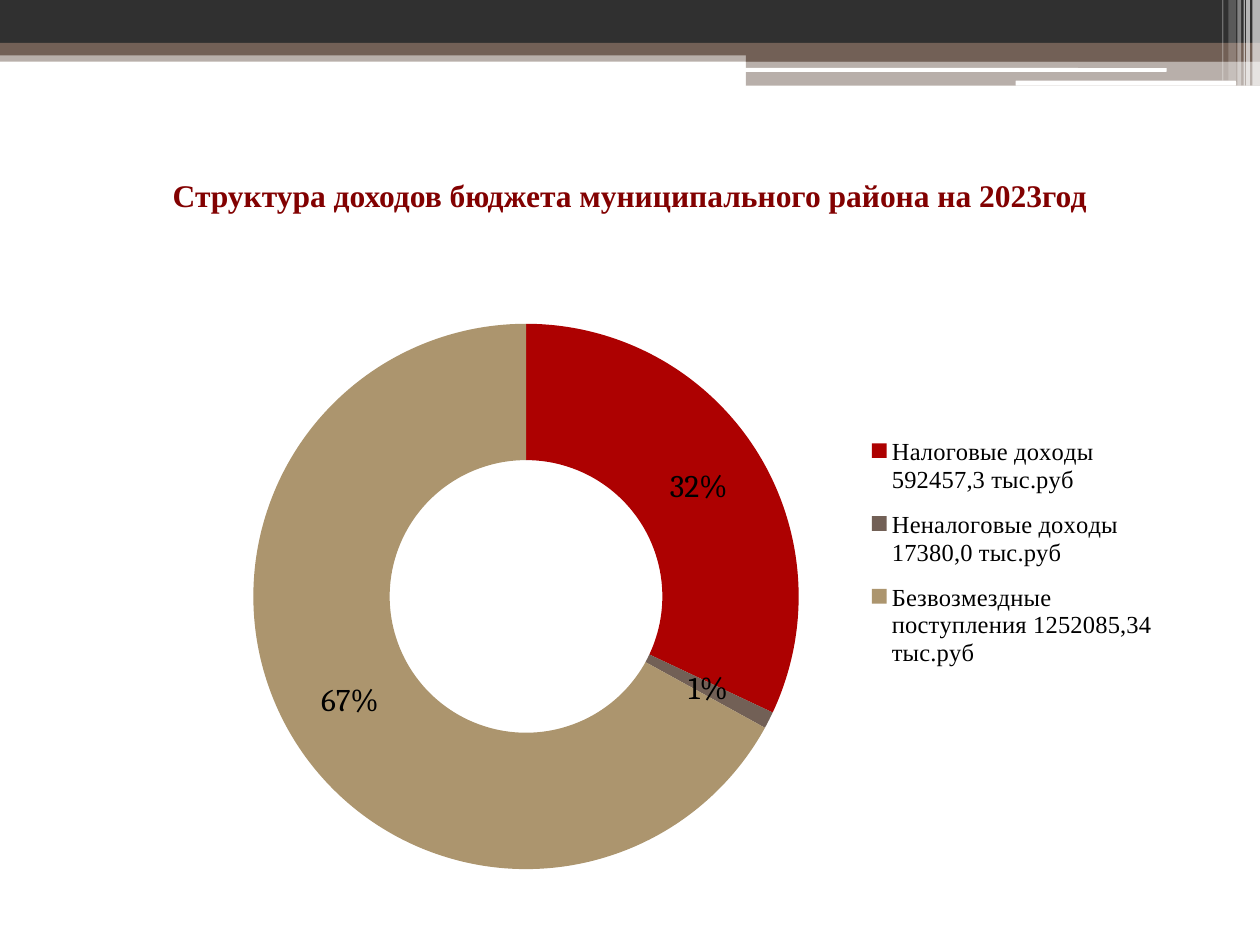
from lxml import etree
from pptx import Presentation
from pptx import util as u
from pptx.chart.data import CategoryChartData
from pptx.dml.color import RGBColor
from pptx.enum import chart as charts, shapes, text
from pptx.oxml import parse_xml
from pptx.oxml.ns import nsdecls, qn

COLORS = {
    "dark": "303030", "brown": "726056", "white": "FFFFFF", "black": "000000",
    "title": "820101", "red": "AD0101", "sand": "AC956E",
}
SERIF = "Times New Roman"

# Left, top, width, height, colour, opacity in percent
BANDS = [
    (0, 0.4, 10, 0.09, "brown", 50),
    (0, 0, 10, 0.34, "dark", 100),
    (0, 0.34, 10, 0.1, "brown", 100),
    (5.92, 0.39, 4.08, 0.1, "brown", 100),
    (5.92, 0.48, 4.08, 0.2, "brown", 50),
]
ROUNDED_LINES = [(5.91, 0.54, 3.35, 0.03), (8.06, 0.64, 1.75, 0.04)]
# Left, width, height, opacity in percent
STRIPES = [
    (9.94, 0.06, 0.68, 65), (9.89, 0.03, 0.68, 65), (9.87, 0.01, 0.68, 60),
    (9.82, 0.03, 0.68, 40), (9.75, 0.06, 0.64, 20), (9.7, 0.01, 0.64, 30),
]
# Category, share, colour
INCOME = [
    ("Налоговые доходы 592457,3 тыс.руб", 32, "red"),
    ("Неналоговые доходы 17380,0 тыс.руб", 1, "brown"),
    ("Безвозмездные поступления 1252085,34 тыс.руб", 67, "sand"),
]


def rgb(name):
    return RGBColor.from_string(COLORS[name])


def inches(box):
    return [u.Inches(value) for value in box]


def add_block(slide, box, color, opacity=100, kind=shapes.MSO_SHAPE.RECTANGLE):
    shape = slide.shapes.add_shape(kind, *inches(box))
    shape.shadow.inherit = False
    shape.line.fill.background()
    shape.fill.solid()
    shape.fill.fore_color.rgb = rgb(color)
    if opacity < 100:
        color_element = shape.fill._xPr.find(".//" + qn("a:srgbClr"))
        etree.SubElement(color_element, qn("a:alpha"), val=str(opacity * 1000))


def add_header(slide, box):
    left, top = box[:2]
    for x, y, width, height, color, opacity in BANDS:
        add_block(slide, (left + x, top + y, width, height), color, opacity)
    for x, y, width, height in ROUNDED_LINES:
        add_block(slide, (left + x, top + y, width, height), "white",
                  kind=shapes.MSO_SHAPE.ROUNDED_RECTANGLE)
    for x, width, height, opacity in STRIPES:
        add_block(slide, (left + x, top, width, height), "white", opacity)


def add_title(slide, box, wording):
    frame = slide.shapes.add_textbox(*inches(box)).text_frame
    frame.word_wrap = True
    frame.vertical_anchor = text.MSO_ANCHOR.MIDDLE
    paragraph = frame.paragraphs[0]
    paragraph.text = wording
    paragraph.alignment = text.PP_ALIGN.CENTER
    set_font(paragraph.font, SERIF, 18, "title")
    paragraph.font.bold = True


def set_font(font, name, size, color):
    font.name = name
    font.size = u.Pt(size)
    font.color.rgb = rgb(color)


def layout_xml(x, y, width, height, target=""):
    """Manual chart layout, in fractions of the chart box."""
    return parse_xml(
        f'<c:layout {nsdecls("c")}><c:manualLayout>{target}'
        '<c:xMode val="edge"/><c:yMode val="edge"/>'
        f'<c:x val="{x}"/><c:y val="{y}"/><c:w val="{width}"/><c:h val="{height}"/>'
        '</c:manualLayout></c:layout>')


def add_income_chart(slide, box):
    data = CategoryChartData()
    data.categories = [name for name, _, _ in INCOME]
    data.add_series("Series 1", [share for _, share, _ in INCOME])
    chart = slide.shapes.add_chart(
        charts.XL_CHART_TYPE.DOUGHNUT, *inches(box), data).chart
    chart.has_title = False
    set_font(chart.font, "Cambria", 18, "black")

    # Ring and percentages
    plot = chart.plots[0]
    plot.vary_by_categories = True
    plot._element.find(qn("c:holeSize")).set("val", "50")
    series = plot.series[0]
    for index, (_, _, color) in enumerate(INCOME):
        fill = series.points[index].format.fill
        fill.solid()
        fill.fore_color.rgb = rgb(color)
    plot.has_data_labels = True
    labels = plot.data_labels
    labels.show_value = False
    labels.show_percentage = True
    labels.number_format = "0%"
    labels.number_format_is_linked = False
    set_font(labels.font, "Cambria", 18, "black")
    plot_area = chart._chartSpace.chart.plotArea
    for layout in plot_area.findall(qn("c:layout")):
        plot_area.remove(layout)
    plot_area.insert(0, layout_xml(0.07, 0.03, 0.55, 0.94,
                                   '<c:layoutTarget val="inner"/>'))

    # Legend
    chart.has_legend = True
    legend = chart.legend
    legend.position = charts.XL_LEGEND_POSITION.RIGHT
    legend.include_in_layout = False
    set_font(legend.font, SERIF, 14, "black")
    for layout in legend._element.findall(qn("c:layout")):
        legend._element.remove(layout)
    legend._element.find(qn("c:legendPos")).addnext(
        layout_xml(0.68, 0.2, 0.31, 0.45))


def main():
    presentation = Presentation()
    presentation.slide_width = u.Inches(10)
    presentation.slide_height = u.Inches(7.5)
    slide = presentation.slides.add_slide(presentation.slide_layouts[6])
    add_header(slide, (0, 0, 10, 0.68))
    add_income_chart(slide, (1.46, 2.41, 7.87, 4.65))
    add_title(slide, (0.5, 0.77, 9, 1.56),
              "Структура доходов бюджета муниципального района на 2023год")
    presentation.save("out.pptx")


if __name__ == "__main__":
    main()
